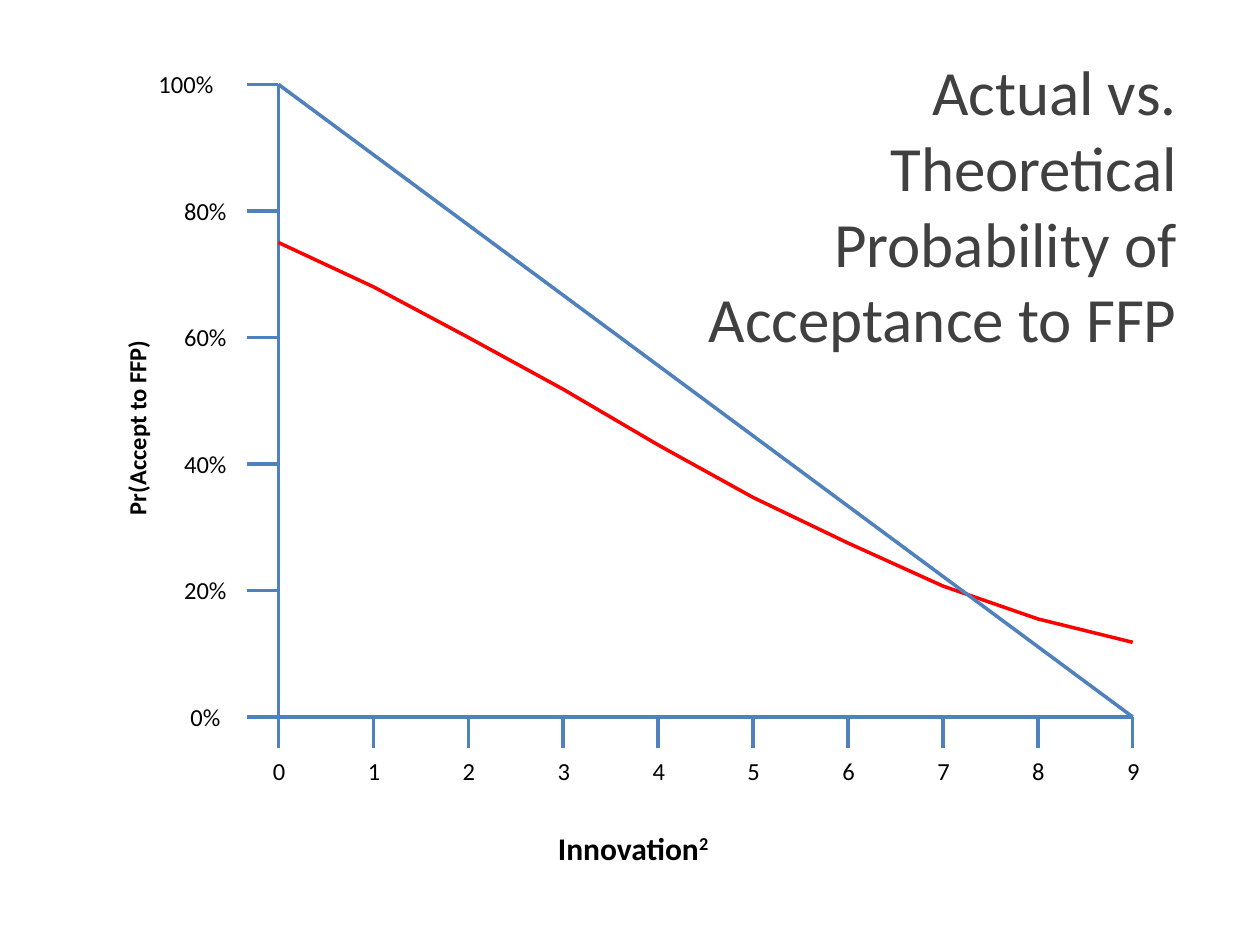
from collections import namedtuple

from lxml import etree
from pptx import Presentation
from pptx import util as u
from pptx.dml.color import RGBColor
from pptx.enum import shapes, text
from pptx.oxml import ns

Box = namedtuple("Box", "left top width height")


class Theme:
    font = "Calibri"
    title_size, axis_size, label_size = 36, 18, 14
    title_color = RGBColor(0x40, 0x40, 0x40)
    text_color = RGBColor(0, 0, 0)
    axis_color = RGBColor(0x4F, 0x81, 0xBD)
    curve_color = RGBColor(0xFF, 0, 0)
    line_width = 2


TICK = 0.25
MAX_INNOVATION = 9
ACTUAL = [75, 68, 60, 51.8, 43, 34.7, 27.5, 20.7, 15.5, 11.8]


def place(shape, box):
    shape.left, shape.top, shape.width, shape.height = map(u.Inches, box)


def style_line(shape, color):
    shape.line.color.rgb = color
    shape.line.width = u.Pt(Theme.line_width)


def style_para(para, size, color, align, bold=False):
    para.alignment = align
    para.font.name = Theme.font
    para.font.size = u.Pt(size)
    para.font.color.rgb = color
    para.font.bold = bold


def add_line(group, start, end):
    line = group.shapes.add_connector(
        shapes.MSO_CONNECTOR.STRAIGHT, *map(u.Inches, (*start, *end)))
    style_line(line, Theme.axis_color)
    etree.SubElement(line._element.spPr, ns.qn("a:effectLst"))


def add_curve(group, points):
    # Whole-number units are needed, so the points are in EMU
    start, *rest = [tuple(map(u.Inches, pair)) for pair in points]
    builder = group.shapes.build_freeform(*start, scale=1.0)
    builder.add_line_segments(rest, close=False)
    curve = builder.convert_to_shape()
    curve.fill.background()
    curve.shadow.inherit = False
    style_line(curve, Theme.curve_color)


def add_label(group, box, words, size=Theme.label_size,
              align=text.PP_ALIGN.CENTER, bold=False):
    label = group.shapes.add_textbox(*map(u.Inches, box))
    label.text_frame.word_wrap = True
    para = label.text_frame.paragraphs[0]
    para.text = words
    style_para(para, size, Theme.text_color, align, bold)
    return label


def add_title(page, box):
    title = page.shapes.title
    place(title, box)
    frame = title.text_frame
    frame.text = "Actual vs. Theoretical Probability of Acceptance to FFP"
    frame.word_wrap = True
    frame.auto_size = text.MSO_AUTO_SIZE.NONE
    frame.vertical_anchor = text.MSO_ANCHOR.TOP
    style_para(frame.paragraphs[0], Theme.title_size, Theme.title_color,
               text.PP_ALIGN.RIGHT)


def add_graph(page, box):
    group = page.shapes.add_group_shape()

    def point(innovation, percent):
        return (box.left + box.width * innovation / MAX_INNOVATION,
                box.top + box.height * (1 - percent / 100))

    # Horizontal axis, its ticks and numbers
    bottom = box.top + box.height
    add_line(group, point(MAX_INNOVATION, 0), (box.left - TICK, bottom))
    for value in range(MAX_INNOVATION + 1):
        x, y = point(value, 0)
        if value:
            add_line(group, (x, y), (x, y + TICK))
        add_label(group, Box(x - 0.17, y + 0.26, 0.35, 0.34), str(value))

    # Vertical axis, its ticks and percentages
    add_line(group, (box.left, bottom + TICK), (box.left, box.top))
    for percent in range(0, 101, 20):
        x, y = point(0, percent)
        full = percent == 100
        if percent:
            add_line(group, (x, y), (x - TICK, y))
        width = 0.8 if full else 0.66
        align = text.PP_ALIGN.LEFT if full else text.PP_ALIGN.CENTER
        add_label(group, Box(x - TICK - width, y - 0.17, width, 0.34),
                  f"{percent}%", align=align)

    # Actual, then theoretical acceptance
    add_curve(group, [point(*pair) for pair in enumerate(ACTUAL)])
    add_line(group, point(0, 100), point(MAX_INNOVATION, 0))

    # Axis titles
    side = add_label(group, Box(box.left - 1.38, box.top + 1.49, 0.51, 2.47),
                     "Pr(Accept to FFP)", bold=True)
    side.text_frame.vertical_anchor = text.MSO_ANCHOR.MIDDLE
    side.text_frame._txBody.bodyPr.set("vert", "vert270")
    below = add_label(group, Box(box.left + 2.12, bottom + 0.84, 1.95, 0.47),
                      "Innovation", Theme.axis_size, text.PP_ALIGN.LEFT, True)
    span = below.text_frame.paragraphs[0].add_run()
    span.text = "2"
    span.font._element.set("baseline", "30000")


def main():
    deck = Presentation()
    deck.slide_width, deck.slide_height = u.Inches(10), u.Inches(7.5)
    page = deck.slides.add_slide(deck.slide_layouts.get_by_name("Title Only"))
    add_title(page, Box(5, 0.37, 4.44, 1.96))
    add_graph(page, Box(2.21, 0.67, 6.78, 5.02))
    deck.save("out.pptx")


if __name__ == "__main__":
    main()
